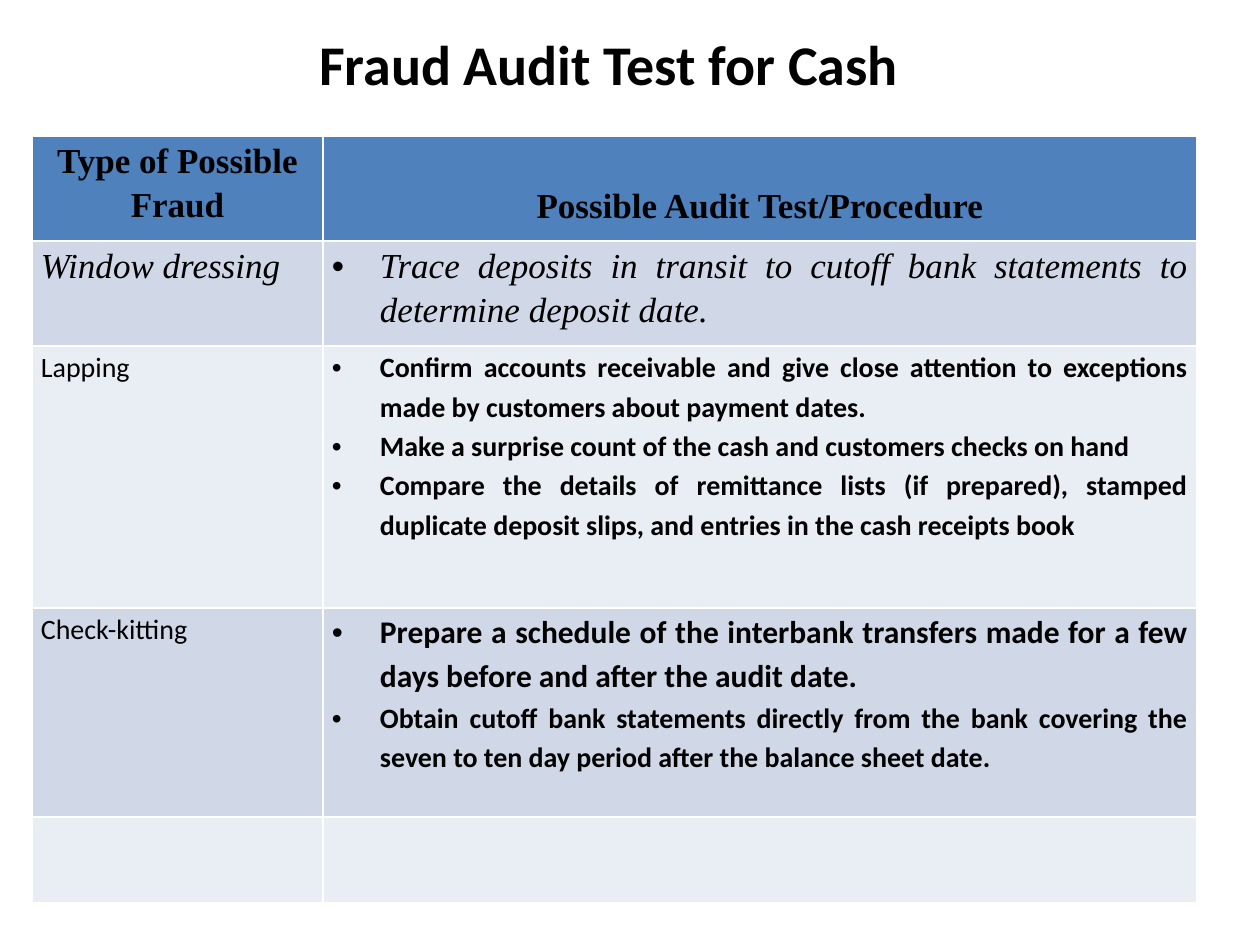
from dataclasses import dataclass

from lxml.etree import SubElement
from pptx import Presentation
from pptx.dml.color import RGBColor
from pptx.enum.text import MSO_ANCHOR, PP_ALIGN
from pptx.oxml.ns import qn
from pptx.util import Pt

SCALE = 914400 // 126
HUES = {"ink": "000000", "head": "4F81BD", "dark": "D0D8E8", "light": "E9EDF4"}
SERIF, SANS = "Times New Roman", "Calibri"
COLS = (291, 874)
ROWS = (105, 105, 262, 209, 86)
PAD, INDENT = 9, 48


def px(count: int) -> int:
    return count * SCALE


def hue(name: str) -> RGBColor:
    return RGBColor.from_string(HUES[name])


def apply(target, values: dict) -> None:
    for name, value in values.items():
        setattr(target, name, value)


@dataclass
class Line:
    text: str
    size: int = 16
    face: str = SANS
    bold: bool = False
    slant: bool = False
    dot: bool = False
    align: PP_ALIGN = PP_ALIGN.JUSTIFY


@dataclass
class Row:
    fill: str
    left: tuple = ()
    right: tuple = ()


def head(text: str) -> Line:
    return Line(text, 20, SERIF, bold=True, align=PP_ALIGN.CENTER)


def point(text: str, size: int = 16) -> Line:
    return Line(text, size, bold=True, dot=True)


def write(para, line: Line) -> None:
    apply(para, {"alignment": line.align, "line_spacing": 1.15})
    run = para.add_run()
    run.text = line.text
    apply(run.font, {"size": Pt(line.size), "name": line.face,
                     "bold": line.bold, "italic": line.slant})
    run.font.color.rgb = hue("ink")
    if line.dot:
        props = para._p.get_or_add_pPr()
        props.set("marL", str(px(INDENT)))
        props.set("indent", str(-px(INDENT)))
        SubElement(props, qn("a:buFont")).set("typeface", "Arial")
        SubElement(props, qn("a:buChar")).set("char", "•")


def paint(cell, lines: tuple, fill: str) -> None:
    apply(cell, {"margin_left": px(PAD), "margin_right": px(PAD),
                 "margin_top": 0, "margin_bottom": 0})
    cell.fill.solid()
    cell.fill.fore_color.rgb = hue(fill)
    frame = cell.text_frame
    for spot, line in enumerate(lines):
        write(frame.add_paragraph() if spot else frame.paragraphs[0], line)


GRID = (
    Row("head", (head("Type of Possible Fraud"),),
        (head("Possible Audit Test/Procedure"),)),
    Row("dark", (Line("Window dressing", 20, SERIF, slant=True),),
        (Line("Trace deposits in transit to cutoff bank statements to "
              "determine deposit date.", 20, SERIF, slant=True, dot=True),)),
    Row("light", (Line("Lapping"),), (
        point("Confirm accounts receivable and give close attention to "
              "exceptions made by customers about payment dates."),
        point("Make a surprise count of the cash and customers checks on hand"),
        point("Compare the details of remittance lists (if prepared), stamped "
              "duplicate deposit slips, and entries in the cash receipts book"))),
    Row("dark", (Line("Check-kitting"),), (
        point("Prepare a schedule of the interbank transfers made for a few "
              "days before and after the audit date.", 18),
        point("Obtain cutoff bank statements directly from the bank covering "
              "the seven to ten day period after the balance sheet date."))),
    Row("light"),
)


def main() -> None:
    deck = Presentation()
    apply(deck, {"slide_width": px(1260), "slide_height": px(945)})
    slide = deck.slides.add_slide(deck.slide_layouts[5])

    title = slide.shapes.title
    apply(title, {"left": px(21), "top": px(21),
                  "width": px(1176), "height": px(84)})
    title.text_frame.vertical_anchor = MSO_ANCHOR.MIDDLE
    para = title.text_frame.paragraphs[0]
    para.text = "Fraud Audit Test for Cash"
    para.alignment = PP_ALIGN.CENTER
    apply(para.font, {"size": Pt(32), "name": SANS, "bold": True})
    para.font.color.rgb = hue("ink")

    table = slide.shapes.add_table(
        len(ROWS), len(COLS), px(32), px(136), px(sum(COLS)), px(sum(ROWS))).table
    for col, width in zip(table.columns, COLS):
        col.width = px(width)
    for band, height, row in zip(table.rows, ROWS, GRID):
        band.height = px(height)
        for cell, lines in zip(band.cells, (row.left, row.right)):
            paint(cell, lines, row.fill)
    apply(table.cell(0, 1), {"vertical_anchor": MSO_ANCHOR.BOTTOM,
                             "margin_bottom": px(15)})
    deck.save("out.pptx")


if __name__ == "__main__":
    main()
